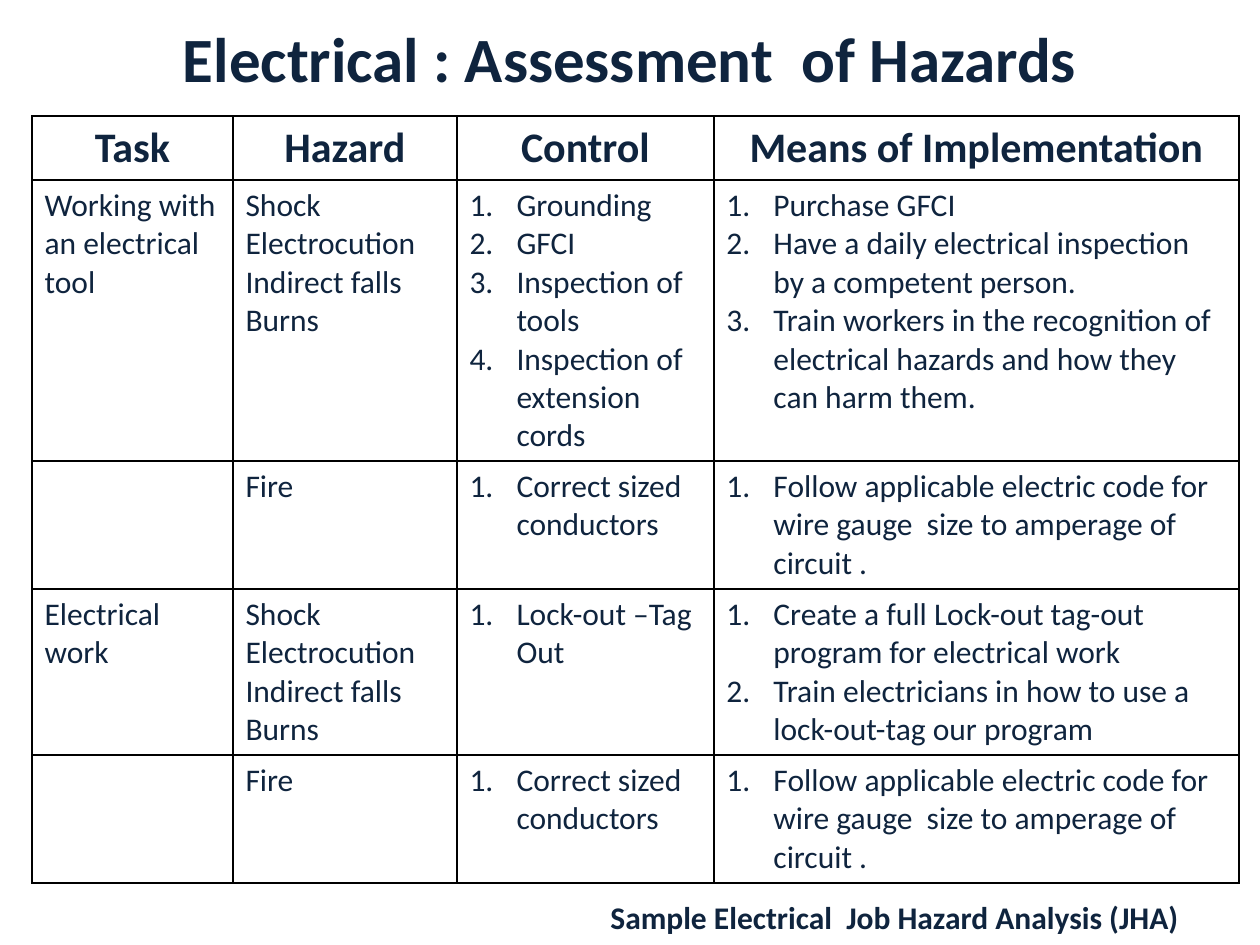
from dataclasses import dataclass

import pptx
import pptx.dml.color
import pptx.enum.text
import pptx.oxml.ns
import pptx.util
from lxml import etree

EMU_PER_PX = 914400 // 126
NAVY = pptx.dml.color.RGBColor(0x0F, 0x24, 0x3E)
BLACK = pptx.dml.color.RGBColor(0, 0, 0)
FONT = "Calibri"
ALIGN = pptx.enum.text.PP_ALIGN
ANCHOR = pptx.enum.text.MSO_ANCHOR

NUMBER_INDENT = 47
TABLE_LEFT, TABLE_TOP = 32, 116
COLUMN_WIDTHS = (201, 224, 257, 525)
HEADER_HEIGHT = 64
HEADINGS = ("Task", "Hazard", "Control", "Means of Implementation")


@dataclass(frozen=True)
class Caption:
    text: str
    left: int
    top: int
    width: int
    height: int
    size: int
    align: ALIGN


@dataclass(frozen=True)
class Assessment:
    task: str
    hazards: tuple[str, ...]
    controls: tuple[str, ...]
    means: tuple[str, ...]
    height: int


CAPTIONS = (
    Caption("Electrical : Assessment  of Hazards", 63, -21, 1134, 157, 36, ALIGN.CENTER),
    Caption("Sample Electrical  Job Hazard Analysis (JHA)", 598, 892, 640, 50, 18, ALIGN.LEFT),
)

SHOCK_HAZARDS = ("Shock", "Electrocution", "Indirect falls", "Burns")
FIRE = Assessment(
    "",
    ("Fire",),
    ("Correct sized conductors",),
    ("Follow applicable electric code for wire gauge  size to amperage of circuit .",),
    128,
)
ASSESSMENTS = (
    Assessment(
        "Working with an electrical tool",
        SHOCK_HAZARDS,
        ("Grounding", "GFCI", "Inspection of tools", "Inspection of extension cords"),
        (
            "Purchase GFCI",
            "Have a daily electrical inspection by a competent person.",
            "Train workers in the recognition of electrical hazards and how they can harm them.",
        ),
        281,
    ),
    FIRE,
    Assessment(
        "Electrical work",
        SHOCK_HAZARDS,
        ("Lock-out –Tag Out",),
        (
            "Create a full Lock-out tag-out program for electrical work",
            "Train electricians in how to use a lock-out-tag our program",
        ),
        166,
    ),
    FIRE,
)


def px(length: int) -> pptx.util.Emu:
    return pptx.util.Emu(length * EMU_PER_PX)


def write_lines(frame, lines: tuple[str, ...], size: int, bold: bool = False,
                align: ALIGN = ALIGN.LEFT, numbered: bool = False) -> None:
    frame.text = "\n".join(lines)
    for paragraph in frame.paragraphs:
        paragraph.alignment = align
        font = paragraph.font
        font.name, font.size, font.bold = FONT, pptx.util.Pt(size), bold
        font.color.rgb = NAVY
        if numbered:
            number_paragraph(paragraph)


def number_paragraph(paragraph) -> None:
    properties = paragraph._p.get_or_add_pPr()
    properties.set("marL", str(px(NUMBER_INDENT)))
    properties.set("indent", str(-px(NUMBER_INDENT)))
    numbering = etree.Element(pptx.oxml.ns.qn("a:buAutoNum"), type="arabicPeriod")
    properties.insert_element_before(numbering, "a:tabLst", "a:defRPr", "a:extLst")


def style_cell(cell) -> None:
    """Clear the fill and rule all four sides."""
    cell.fill.background()
    properties = cell._tc.get_or_add_tcPr()
    qn = pptx.oxml.ns.qn
    for position, side in enumerate(("lnL", "lnR", "lnT", "lnB")):
        border = etree.Element(qn(f"a:{side}"), w=str(pptx.util.Pt(1)))
        fill = etree.SubElement(border, qn("a:solidFill"))
        etree.SubElement(fill, qn("a:srgbClr"), val=str(BLACK))
        properties.insert(position, border)


def add_caption(slide, caption: Caption) -> None:
    box = slide.shapes.add_textbox(
        px(caption.left), px(caption.top), px(caption.width), px(caption.height))
    frame = box.text_frame
    frame.word_wrap = True
    frame.vertical_anchor = ANCHOR.MIDDLE
    write_lines(frame, (caption.text,), caption.size, bold=True, align=caption.align)


def add_hazard_table(slide) -> None:
    heights = (HEADER_HEIGHT, *(assessment.height for assessment in ASSESSMENTS))
    table = slide.shapes.add_table(
        len(heights), len(COLUMN_WIDTHS), px(TABLE_LEFT), px(TABLE_TOP),
        px(sum(COLUMN_WIDTHS)), px(sum(heights))).table
    table.first_row = table.horz_banding = False
    for column, width in zip(table.columns, COLUMN_WIDTHS):
        column.width = px(width)
    for row, height in zip(table.rows, heights):
        row.height = px(height)
    for cell in table.iter_cells():
        style_cell(cell)

    for column, heading in enumerate(HEADINGS):
        write_lines(table.cell(0, column).text_frame, (heading,), 24,
                    bold=True, align=ALIGN.CENTER)
    for row, assessment in enumerate(ASSESSMENTS, start=1):
        entries = ((assessment.task,), assessment.hazards,
                   assessment.controls, assessment.means)
        for column, lines in enumerate(entries):
            write_lines(table.cell(row, column).text_frame, lines, 18,
                        numbered=column >= 2)


def main() -> None:
    presentation = pptx.Presentation()
    presentation.slide_width = px(1260)
    presentation.slide_height = px(945)
    slide = presentation.slides.add_slide(presentation.slide_layouts[6])
    title, footer = CAPTIONS
    add_caption(slide, title)
    add_hazard_table(slide)
    add_caption(slide, footer)
    presentation.save("out.pptx")


if __name__ == "__main__":
    main()
